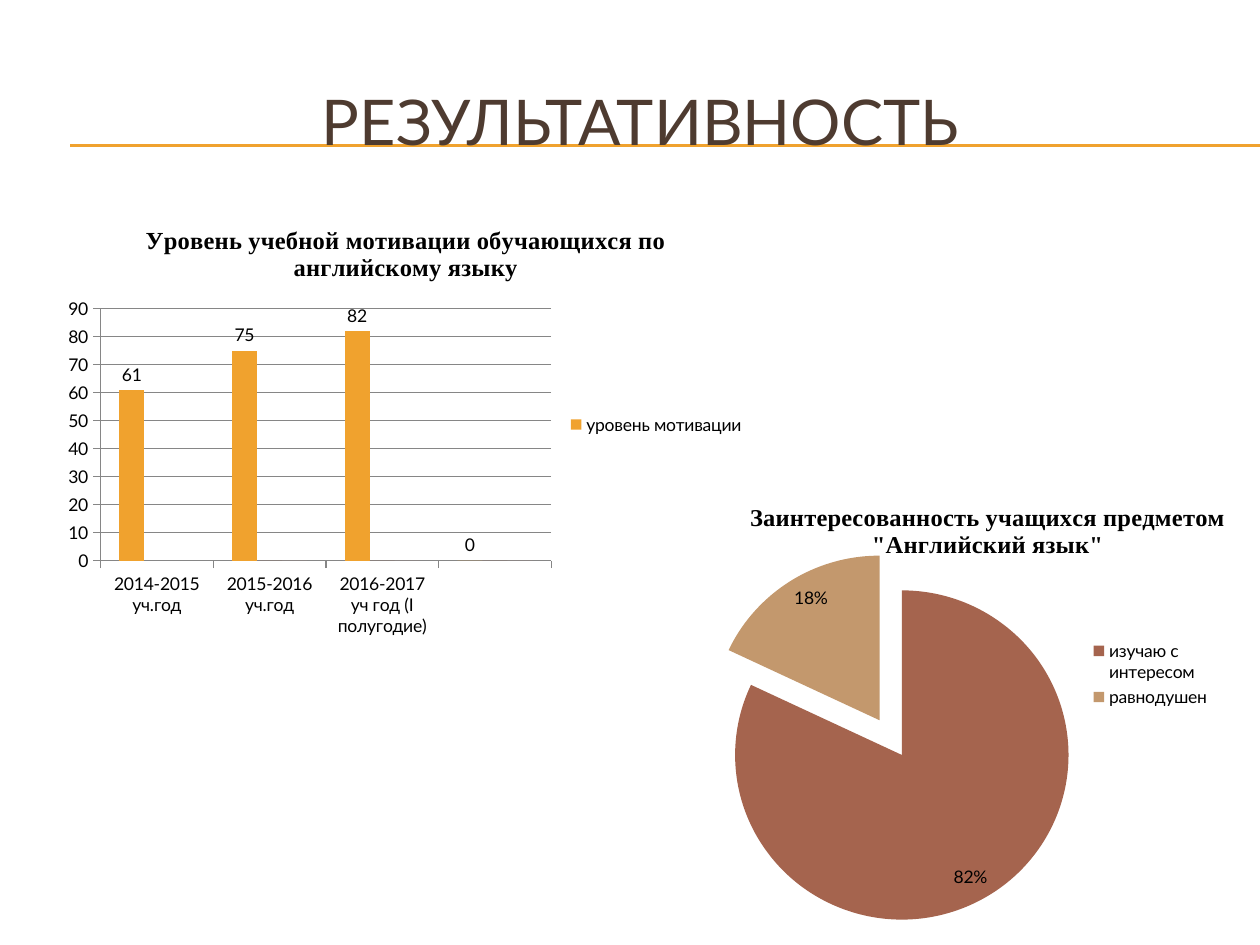
import pptx
import pptx.chart.data
import pptx.dml.color
import pptx.enum.chart
import pptx.enum.shapes
import pptx.enum.text
import pptx.oxml
import pptx.oxml.ns
import pptx.util

Pt = pptx.util.Pt
COLORS = {
    "amber": "F0A22E",
    "rust": "A5644E",
    "rose": "B58B80",
    "tan": "C3986D",
    "heading": "4E3B30",
    "text": "000000",
    "grid": "868686",
}
FORMATS = {
    "heading": {"size": Pt(36), "name": "Lato", "bold": False},
    "chart": {"size": Pt(10), "name": "Lato"},
    "chart_title": {"size": Pt(14), "name": "Times New Roman", "bold": True},
}


def rgb(name):
    return pptx.dml.color.RGBColor.from_string(COLORS[name])


def explosion_element(value):
    return pptx.oxml.parse_xml(
        f'<c:explosion {pptx.oxml.ns.nsdecls("c")} val="{value}"/>')


def lay_out_before(follower, fractions, target=""):
    parent = follower.getparent()
    for automatic in parent.findall(pptx.oxml.ns.qn("c:layout")):
        parent.remove(automatic)
    modes = '<c:xMode val="edge"/><c:yMode val="edge"/>'
    sizes = "".join(f'<c:{tag} val="{value}"/>' for tag, value in zip("xywh", fractions))
    follower.addprevious(pptx.oxml.parse_xml(
        f'<c:layout {pptx.oxml.ns.nsdecls("c")}>'
        f'<c:manualLayout>{target}{modes}{sizes}</c:manualLayout></c:layout>'))


class SlideStyle:
    def __init__(self, slide):
        self.slide = slide

    def style_font(self, font, format_name, color="text"):
        for attribute, value in FORMATS[format_name].items():
            setattr(font, attribute, value)
        font.color.rgb = rgb(color)

    def heading(self, text, left, top, width, height):
        heading = self.slide.shapes.title
        place = {"left": left, "top": top, "width": width, "height": height}
        for attribute, value in place.items():
            setattr(heading, attribute, Pt(value))
        frame = heading.text_frame
        frame.text = text
        frame.word_wrap = True
        frame.auto_size = pptx.enum.text.MSO_AUTO_SIZE.NONE
        frame.vertical_anchor = pptx.enum.text.MSO_ANCHOR.MIDDLE
        paragraph = frame.paragraphs[0]
        paragraph.alignment = pptx.enum.text.PP_ALIGN.CENTER
        self.style_font(paragraph.runs[0].font, "heading", "heading")

    def rule(self, left, right, y):
        rule = self.slide.shapes.add_connector(
            pptx.enum.shapes.MSO_CONNECTOR.STRAIGHT, Pt(left), Pt(y), Pt(right), Pt(y))
        rule.line.color.rgb = rgb("amber")
        rule.line.width = Pt(0.75)
        rule.element.spPr.append(pptx.oxml.parse_xml(
            f'<a:effectLst {pptx.oxml.ns.nsdecls("a")}/>'))
        self.slide.shapes.title.element.addprevious(rule.element)

    def chart(self, kind, title, categories, series, place, hidden_entries):
        data = pptx.chart.data.CategoryChartData()
        data.categories = categories
        for name, values in series:
            data.add_series(name, values)
        chart = self.slide.shapes.add_chart(kind, *map(Pt, place), data).chart
        self.style_font(chart.font, "chart")
        chart.has_title = True
        chart.chart_title.text_frame.text = title
        run = chart.chart_title.text_frame.paragraphs[0].runs[0]
        self.style_font(run.font, "chart_title")
        chart.has_legend = True
        chart.legend.position = pptx.enum.chart.XL_LEGEND_POSITION.RIGHT
        chart.legend.include_in_layout = False
        legend_position = chart.legend._element.find(pptx.oxml.ns.qn("c:legendPos"))
        for index in reversed(hidden_entries):
            legend_position.addnext(pptx.oxml.parse_xml(
                f'<c:legendEntry {pptx.oxml.ns.nsdecls("c")}>'
                f'<c:idx val="{index}"/><c:delete val="1"/></c:legendEntry>'))
        chart.plots[0].vary_by_categories = kind == pptx.enum.chart.XL_CHART_TYPE.PIE
        return chart

    def columns(self, title, categories, series, place, colors, hidden_entries):
        chart = self.chart(pptx.enum.chart.XL_CHART_TYPE.COLUMN_CLUSTERED,
                           title, categories, series, place, hidden_entries)
        plot = chart.plots[0]
        plot.gap_width = 150
        plot.overlap = 0
        for column, color in zip(plot.series, colors):
            column.format.fill.solid()
            column.format.fill.fore_color.rgb = rgb(color)
            column.invert_if_negative = False
        labels = plot.series[0].data_labels
        labels.show_value = True
        labels.position = pptx.enum.chart.XL_LABEL_POSITION.OUTSIDE_END
        chart.value_axis.has_major_gridlines = True
        for axis in (chart.category_axis, chart.value_axis):
            axis.major_tick_mark = pptx.enum.chart.XL_TICK_MARK.OUTSIDE
        for part in (chart.category_axis, chart.value_axis, chart.value_axis.major_gridlines):
            part.format.line.color.rgb = rgb("grid")
            part.format.line.width = Pt(0.75)

    def pie(self, title, categories, series, place, colors, hidden_entries,
            layouts, explosion, point_explosions):
        chart = self.chart(pptx.enum.chart.XL_CHART_TYPE.PIE,
                           title, categories, series, place, hidden_entries)
        plot = chart.plots[0]
        slices = plot.series[0]
        for index, color in enumerate(colors):
            fill = slices.points[index].format.fill
            fill.solid()
            fill.fore_color.rgb = rgb(color)
        points = slices._element.findall(pptx.oxml.ns.qn("c:dPt"))
        for index, value in point_explosions.items():
            points[index].find(pptx.oxml.ns.qn("c:spPr")).addprevious(
                explosion_element(value))
        points[0].addprevious(explosion_element(explosion))
        labels = slices.data_labels
        labels.show_value = False
        labels.show_percentage = True
        labels.number_format = "0%"
        labels.number_format_is_linked = False
        labels.position = pptx.enum.chart.XL_LABEL_POSITION.INSIDE_END
        overlay = pptx.oxml.ns.qn("c:overlay")
        lay_out_before(chart.chart_title._element.find(overlay), layouts["title"])
        lay_out_before(chart.legend._element.find(overlay), layouts["legend"])
        lay_out_before(plot._element, layouts["plot"], '<c:layoutTarget val="inner"/>')


def main():
    presentation = pptx.Presentation()
    presentation.slide_width = Pt(720)
    presentation.slide_height = Pt(540)
    results = SlideStyle(presentation.slides.add_slide(presentation.slide_layouts[5]))
    for y in (82.8, 83.5):
        results.rule(40.3, 720, y)
    results.heading("РЕЗУЛЬТАТИВНОСТЬ", 24, 36, 684, 66)
    results.columns(
        "Уровень учебной мотивации обучающихся по английскому языку",
        ["2014-2015 уч.год", "2015-2016 уч.год", "2016-2017 уч год (I полугодие)", ""],
        [("уровень мотивации", (61, 75, 82, 0)),
         ("Series 2", (None, 0, 0, 0)),
         ("Series 3", (None, 0, 0, 0))],
        (31, 116.6, 401.8, 252), ["amber", "rust", "rose"], [1, 2])
    results.pie(
        'Заинтересованность учащихся предметом "Английский язык"',
        ["", "изучаю с интересом", "", "равнодушен"],
        [("Series 1", (None, 82, None, 18))],
        (360, 281.5, 347.8, 244), ["amber", "rust", "rose", "tan"], [0, 2],
        layouts={"title": (0.19, 0.01),
                 "legend": (0.75, 0.34, 0.21, 0.18),
                 "plot": (0.1, 0.13, 0.62, 0.82)},
        explosion=5, point_explosions={1: 25, 3: 0})
    presentation.save("out.pptx")


if __name__ == "__main__":
    main()
